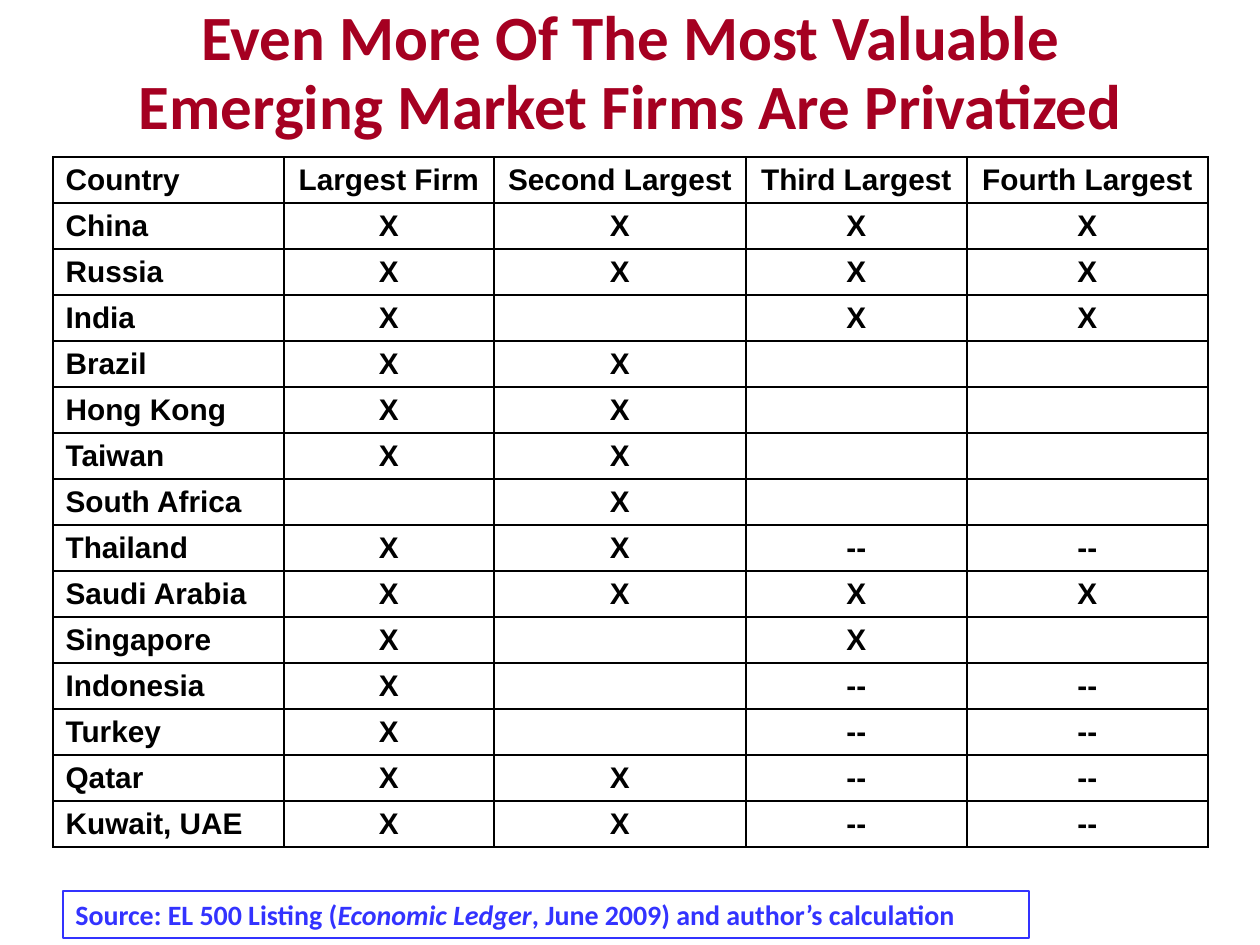
from lxml import etree
from pptx import Presentation
from pptx.dml.color import RGBColor
from pptx.enum.shapes import MSO_SHAPE
from pptx.enum.text import MSO_ANCHOR, MSO_AUTO_SIZE, PP_ALIGN
from pptx.oxml.ns import qn
from pptx.util import Pt

PX = 914400 // 126
LEFT, CENTER = PP_ALIGN.LEFT, PP_ALIGN.CENTER
MIDDLE = MSO_ANCHOR.MIDDLE
NO_AUTOFIT = MSO_AUTO_SIZE.NONE
RECTANGLE = MSO_SHAPE.RECTANGLE
TITLE_ONLY = 5

COLORS = {"title": "A50021", "text": "000000", "border": "000000",
          "source": "3333FF", "background": "FFFFFF"}
TITLE_FONT = {"name": "Calibri", "size": Pt(36), "bold": True}
TABLE_FONT = {"name": "Arial", "size": Pt(17), "bold": True}
SOURCE_FONT = {"name": "Calibri", "size": Pt(16), "bold": True}

COLUMN_WIDTHS = [231, 210, 252, 221, 241]
ROW_HEIGHT = 46
HEADER = ["Country", "Largest Firm", "Second Largest", "Third Largest", "Fourth Largest"]
COUNTRIES = [
    ("China", "X", "X", "X", "X"),
    ("Russia", "X", "X", "X", "X"),
    ("India", "X", "", "X", "X"),
    ("Brazil", "X", "X", "", ""),
    ("Hong Kong", "X", "X", "", ""),
    ("Taiwan", "X", "X", "", ""),
    ("South Africa", "", "X", "", ""),
    ("Thailand", "X", "X", "--", "--"),
    ("Saudi Arabia", "X", "X", "X", "X"),
    ("Singapore", "X", "", "X", ""),
    ("Indonesia", "X", "", "--", "--"),
    ("Turkey", "X", "", "--", "--"),
    ("Qatar", "X", "X", "--", "--"),
    ("Kuwait, UAE", "X", "X", "--", "--"),
]
SOURCE_PARTS = [("Source: EL 500 Listing (", False), ("Economic Ledger", True),
                (", June 2009) and author’s calculation", False)]


def color(name):
    return RGBColor.from_string(COLORS[name])


def set_attributes(target, values):
    for name, value in values.items():
        setattr(target, name, value)


def add_run(paragraph, text, font, color_name, italic=False):
    run = paragraph.add_run()
    run.text = text
    set_attributes(run.font, {**font, "italic": italic})
    run.font.color.rgb = color(color_name)


def place(shape, left, top, width, height):
    set_attributes(shape, {"left": left * PX, "top": top * PX,
                           "width": width * PX, "height": height * PX})


def add_title(slide, text):
    title = slide.shapes.title
    place(title, 95, 21, 1071, 105)
    set_attributes(title.text_frame, {"word_wrap": True, "auto_size": NO_AUTOFIT,
                                      "vertical_anchor": MIDDLE})
    paragraph = title.text_frame.paragraphs[0]
    set_attributes(paragraph, {"alignment": CENTER, "line_spacing": Pt(39)})
    add_run(paragraph, text, TITLE_FONT, "title")


def set_borders(cell):
    properties = cell._tc.get_or_add_tcPr()
    for index, side in enumerate(("a:lnL", "a:lnR", "a:lnT", "a:lnB")):
        line = etree.Element(qn(side), w=str(Pt(1)))
        fill = etree.SubElement(line, qn("a:solidFill"))
        etree.SubElement(fill, qn("a:srgbClr"), val=COLORS["border"])
        properties.insert(index, line)


def format_cell(cell, text, alignment):
    set_attributes(cell, {"vertical_anchor": MIDDLE,
                          "margin_top": 3 * PX, "margin_bottom": 3 * PX})
    cell.fill.solid()
    cell.fill.fore_color.rgb = color("background")
    set_borders(cell)
    paragraph = cell.text_frame.paragraphs[0]
    paragraph.alignment = alignment
    if text:
        add_run(paragraph, text, TABLE_FONT, "text")


def add_country_table(slide, rows, left, top):
    frame = slide.shapes.add_table(
        len(rows), len(COLUMN_WIDTHS), left * PX, top * PX,
        sum(COLUMN_WIDTHS) * PX, len(rows) * ROW_HEIGHT * PX)
    table = frame.table
    set_attributes(table, {"first_row": False, "horz_banding": False})
    for column, width in zip(table.columns, COLUMN_WIDTHS):
        column.width = width * PX
    for row, texts in zip(table.rows, rows):
        row.height = ROW_HEIGHT * PX
        for index, (cell, text) in enumerate(zip(row.cells, texts)):
            format_cell(cell, text, CENTER if index else LEFT)


def add_source_box(slide, parts):
    box = slide.shapes.add_shape(RECTANGLE, 0, 0, PX, PX)
    place(box, 63, 891, 966, 47)
    box.shadow.inherit = False
    box.fill.background()
    box.line.color.rgb = color("source")
    box.line.width = Pt(0.75)
    set_attributes(box.text_frame, {"word_wrap": True, "vertical_anchor": MIDDLE})
    paragraph = box.text_frame.paragraphs[0]
    paragraph.alignment = LEFT
    for text, italic in parts:
        add_run(paragraph, text, SOURCE_FONT, "source", italic)


def main():
    presentation = Presentation()
    set_attributes(presentation, {"slide_width": 1260 * PX, "slide_height": 945 * PX})
    slide = presentation.slides.add_slide(presentation.slide_layouts[TITLE_ONLY])

    # Heading, country grid, then the source note
    add_title(slide, "Even More Of The Most Valuable Emerging Market Firms Are Privatized")
    add_country_table(slide, [HEADER, *COUNTRIES], 53, 157)
    add_source_box(slide, SOURCE_PARTS)
    presentation.save("out.pptx")


if __name__ == "__main__":
    main()
